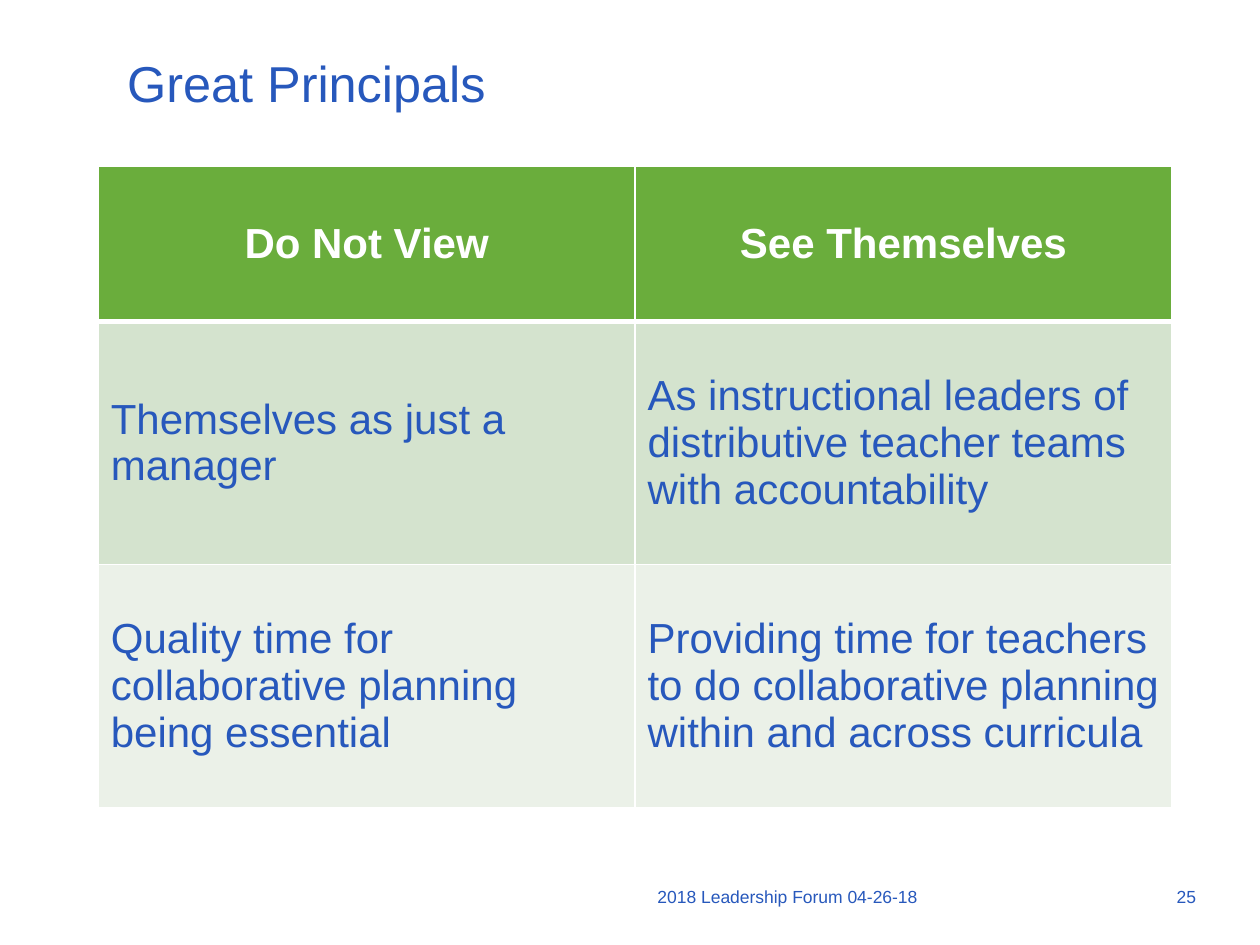
from lxml.etree import SubElement
from pptx import Presentation
from pptx.dml.color import RGBColor
from pptx.enum.text import MSO_ANCHOR as Anchor, PP_ALIGN as Align
from pptx.oxml.ns import qn
from pptx.util import Inches, Pt

BLUE, GREEN, WHITE = "2758BC", "6AAD3C", "FFFFFF"
BANDS = ["D4E3CE", "EBF1E8"]
ROWS = [
    ["Do Not View", "See Themselves"],
    ["Themselves as just a manager",
     "As instructional leaders of distributive teacher teams with accountability"],
    ["Quality time for collaborative planning being essential",
     "Providing time for teachers to do collaborative planning within and across curricula"],
]
ROW_HEIGHTS = [1.23, 1.93, 1.93]
COLUMN_WIDTH = 4.26


def rgb(value):
    return RGBColor.from_string(value)


def write(tf, text, size, color=BLUE, bold=False, align=Align.LEFT):
    tf.word_wrap = True
    p = tf.paragraphs[0]
    p.text = text
    p.alignment = align
    p.font.name = "Arial"
    p.font.size = Pt(size)
    p.font.bold = bold
    p.font.color.rgb = rgb(color)


def add_title(s, text):
    sp = s.shapes.title
    sp.left, sp.top, sp.width, sp.height = map(Inches, (0.91, 0.34, 8.41, 0.62))
    sp.text_frame.vertical_anchor = Anchor.MIDDLE
    write(sp.text_frame, text, 28.8)


def add_footer(s, text, left, width):
    box = s.shapes.add_textbox(Inches(left), Inches(6.98), Inches(width), Inches(0.45))
    write(box.text_frame, text, 10)


def set_borders(cell, **widths):
    tc_pr = cell._tc.get_or_add_tcPr()
    for side in "LRTB":
        ln = SubElement(tc_pr, qn(f"a:ln{side}"), w=str(Pt(widths.get(side, 1))))
        fill = SubElement(ln, qn("a:solidFill"))
        SubElement(fill, qn("a:srgbClr"), val=WHITE)


def format_cell(cell, text, row):
    cell.vertical_anchor = Anchor.MIDDLE
    if row == 0:
        write(cell.text_frame, text, 24, WHITE, True, Align.CENTER)
        set_borders(cell, B=3)
    else:
        write(cell.text_frame, text, 24)
        set_borders(cell, T=3 if row == 1 else 1)
    cell.fill.solid()
    cell.fill.fore_color.rgb = rgb([GREEN, *BANDS][row])


def add_comparison(s):
    columns = len(ROWS[0])
    table = s.shapes.add_table(
        len(ROWS), columns, Inches(0.78), Inches(1.32),
        Inches(columns * COLUMN_WIDTH), Inches(sum(ROW_HEIGHTS))).table
    for column in table.columns:
        column.width = Inches(COLUMN_WIDTH)
    for i, texts in enumerate(ROWS):
        table.rows[i].height = Inches(ROW_HEIGHTS[i])
        for j, text in enumerate(texts):
            format_cell(table.cell(i, j), text, i)


def main():
    prs = Presentation()
    prs.slide_width, prs.slide_height = Inches(10), Inches(7.5)
    s = prs.slides.add_slide(prs.slide_layouts[5])
    add_title(s, "Great Principals")
    add_footer(s, "2018 Leadership Forum 04-26-18", 5.12, 4.13)
    add_footer(s, "25", 9.24, 0.57)
    add_comparison(s)
    prs.save("out.pptx")


if __name__ == "__main__":
    main()
